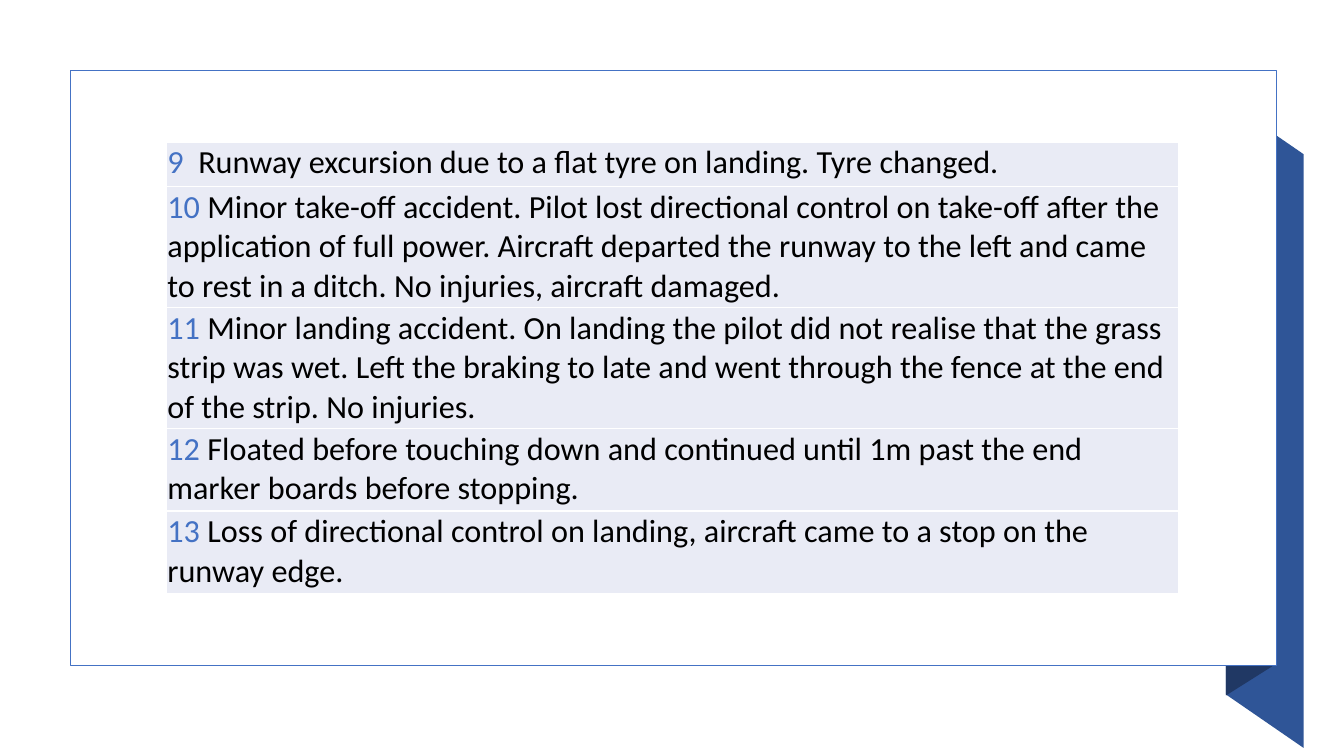
from lxml.etree import SubElement
from pptx import Presentation
from pptx.dml.color import RGBColor
from pptx.enum.shapes import MSO_SHAPE
from pptx.oxml.ns import qn
from pptx.util import Inches, Pt

INCIDENTS = [
    ("9", "  Runway excursion due to a flat tyre on landing. Tyre changed.", 0.44),
    ("10", " Minor take-off accident. Pilot lost directional control on take-off after the "
           "application of full power. Aircraft departed the runway to the left and came to "
           "rest in a ditch. No injuries, aircraft damaged.", 1.2),
    ("11", " Minor landing accident. On landing the pilot did not realise that the grass strip "
           "was wet. Left the braking to late and went through the fence at the end of the "
           "strip. No injuries.", 1.2),
    ("12", " Floated before touching down and continued until 1m past the end marker boards "
           "before stopping.", 0.82),
    ("13", " Loss of directional control on landing, aircraft came to a stop on the runway "
           "edge.", 0.82),
]
RIBBON_FACES = [
    ("2F5597", [(12.93, 7.42), (12.16, 6.89), (12.16, 1), (12.93, 1.53)]),
    ("203864", [(12.62, 6.61), (12.16, 6.9), (12.16, 1), (12.62, 0.7)]),
]
FRAME = (0.7, 0.7, 11.96, 5.9)
TABLE_LEFT, TABLE_TOP, TABLE_WIDTH = 1.65, 1.41, 10.04
BLUE, BLACK, WHITE, BAND = "4472C4", "000000", "FFFFFF", "E9EBF5"


def rgb(color):
    return RGBColor.from_string(color)


def set_fill(target, color):
    target.fill.solid()
    target.fill.fore_color.rgb = rgb(color)


def add_run(p, text, size=23, color=BLACK, font="Calibri"):
    r = p.add_run()
    r.text = text
    r.font.size = Pt(size)
    r.font.name = font
    r.font.color.rgb = rgb(color)


def add_ribbon_face(s, color, points):
    builder = s.shapes.build_freeform(*map(Inches, points[0]), scale=1.0)
    builder.add_line_segments([(Inches(x), Inches(y)) for x, y in points[1:]], close=True)
    sp = builder.convert_to_shape()
    sp.shadow.inherit = False
    set_fill(sp, color)
    sp.line.fill.background()


def add_borders(cell, color=WHITE, width=1):
    """Draw all four borders; called before the fill, which must follow them in the XML."""
    tc_pr = cell._tc.get_or_add_tcPr()
    for side in ("a:lnL", "a:lnR", "a:lnT", "a:lnB"):
        ln = SubElement(tc_pr, qn(side), w=str(Pt(width)))
        SubElement(SubElement(ln, qn("a:solidFill")), qn("a:srgbClr"), val=color)


def add_incident_table(s):
    height = sum(h for _, _, h in INCIDENTS)
    table = s.shapes.add_table(len(INCIDENTS), 1, Inches(TABLE_LEFT), Inches(TABLE_TOP),
                               Inches(TABLE_WIDTH), Inches(height)).table
    table.first_row = False
    for row, (number, text, row_height) in zip(table.rows, INCIDENTS):
        row.height = Inches(row_height)
        cell = row.cells[0]
        cell.margin_left = cell.margin_right = cell.margin_top = Inches(0.01)
        cell.margin_bottom = 0
        add_borders(cell)
        set_fill(cell, BAND)
        p = cell.text_frame.paragraphs[0]
        add_run(p, number, color=BLUE)
        add_run(p, text)


def main():
    prs = Presentation()
    prs.slide_width, prs.slide_height = Inches(13.33), Inches(7.5)
    s = prs.slides.add_slide(prs.slide_layouts[6])
    for color, points in RIBBON_FACES:
        add_ribbon_face(s, color, points)
    frame = s.shapes.add_shape(MSO_SHAPE.RECTANGLE, *map(Inches, FRAME))
    frame.shadow.inherit = False
    set_fill(frame, WHITE)
    frame.line.color.rgb = rgb(BLUE)
    frame.line.width = Pt(1)
    add_incident_table(s)
    prs.save("out.pptx")


if __name__ == "__main__":
    main()
